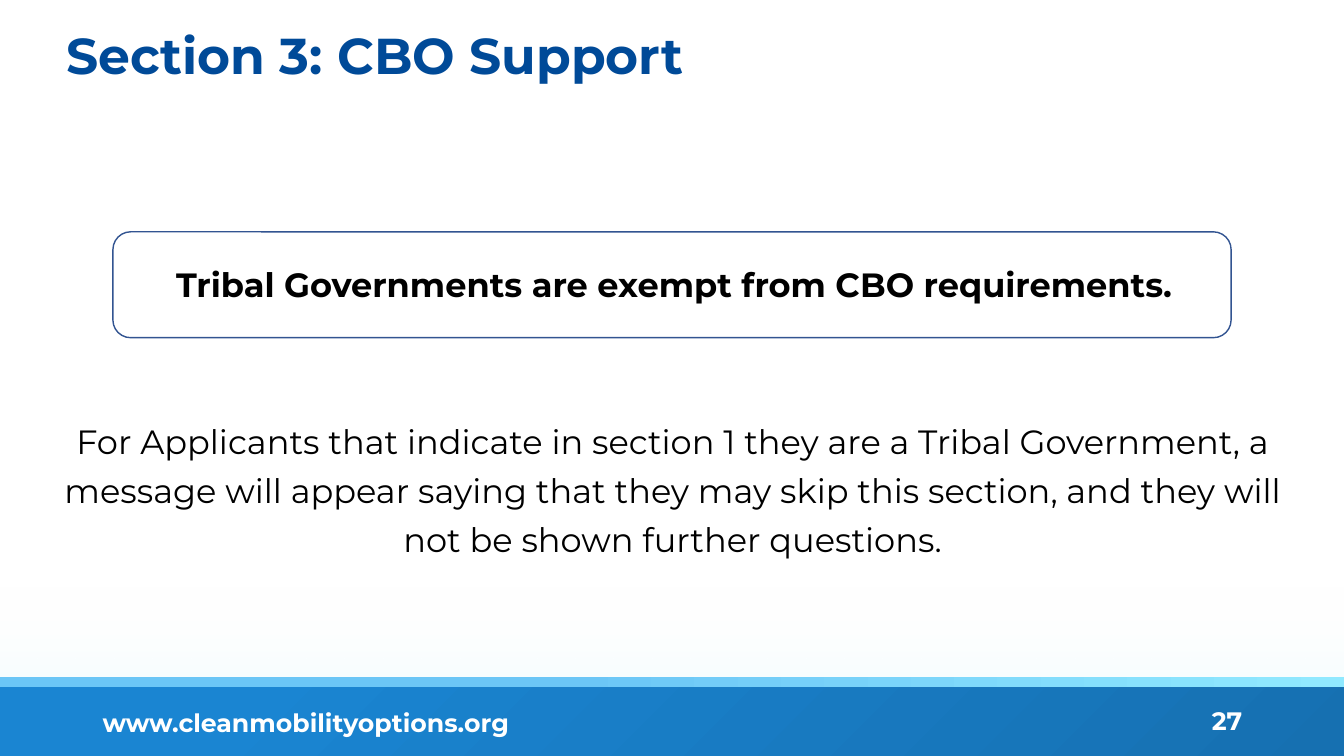
from dataclasses import dataclass
from typing import Optional

from lxml import etree
from pptx import Presentation
from pptx import util as u
from pptx.dml.color import RGBColor
from pptx.enum import shapes, text
from pptx.oxml import ns

FONT = "Montserrat"
COLORS = {
    "white": "FFFFFF",
    "black": "000000",
    "title": "004A98",
    "outline": "325491",
    "mist": "E5FBFE",
    "footer_dark": "1670B1",
    "footer_light": "1A85D2",
    "stripe_blue": "6BC6F6",
    "stripe_cyan": "90E9FF",
}


@dataclass(frozen=True)
class Area:
    left: float
    top: float
    width: float
    height: float

    def lengths(self) -> tuple:
        return tuple(u.Inches(n) for n in (self.left, self.top, self.width, self.height))


@dataclass(frozen=True)
class Band:
    area: Area
    stops: tuple
    angle: int
    fades: bool = False


@dataclass(frozen=True)
class Label:
    area: Area
    words: str
    size: int
    color: str
    bold: bool = True
    align: text.PP_ALIGN = text.PP_ALIGN.LEFT
    anchor: text.MSO_ANCHOR = text.MSO_ANCHOR.TOP
    inset: tuple = (0.1, 0.05)
    line_points: Optional[int] = None
    fill: Optional[str] = None


BANDS = [
    Band(Area(0, 5.82, 13.33, 1.68), ((0, "mist"), (1, "white")), 90, fades=True),
    Band(Area(0, 6.81, 13.33, 0.69), ((0, "footer_dark"), (0.83, "footer_light")), 135),
    Band(Area(0, 6.72, 13.33, 0.1), ((0.42, "stripe_blue"), (1, "stripe_cyan")), 0),
]
LABELS = [
    Label(Area(0.92, 6.97, 5.88, 0.4), "www.cleanmobilityoptions.org", 18, "white",
          anchor=text.MSO_ANCHOR.MIDDLE),
    Label(Area(0.53, 0.17, 9.94, 0.74), "Section 3: CBO Support", 36, "title",
          inset=(0.13, 0.07)),
    Label(Area(0.95, 2.57, 11.47, 0.5),
          "Tribal Governments are exempt from CBO requirements.", 24, "black",
          align=text.PP_ALIGN.CENTER, fill="white"),
    Label(Area(0.37, 4.04, 12.6, 1.53),
          "For Applicants that indicate in section 1 they are a Tribal Government, "
          "a message will appear saying that they may skip this section, and they "
          "will not be shown further questions.", 24, "black", bold=False,
          align=text.PP_ALIGN.CENTER, line_points=35),
    Label(Area(9.42, 6.95, 3, 0.4), "27", 18, "white",
          align=text.PP_ALIGN.RIGHT, anchor=text.MSO_ANCHOR.MIDDLE),
]
FRAME = Area(1.12, 2.3, 11.09, 1.05)


def rgb(name: str) -> RGBColor:
    return RGBColor.from_string(COLORS[name])


def draw_band(page, band: Band) -> None:
    box = page.shapes.add_shape(shapes.MSO_SHAPE.RECTANGLE, *band.area.lengths())
    box.shadow.inherit = False
    box.line.fill.background()
    box.fill.gradient()
    box.fill.gradient_angle = band.angle
    for stop, (position, color) in zip(box.fill.gradient_stops, band.stops):
        stop.position = position
        stop.color.rgb = rgb(color)
    if band.fades:
        last_color = box._element.findall(".//" + ns.qn("a:srgbClr"))[-1]
        etree.SubElement(last_color, ns.qn("a:alpha")).set("val", "0")


def draw_label(page, label: Label) -> None:
    box = page.shapes.add_textbox(*label.area.lengths())
    if label.fill:
        box.fill.solid()
        box.fill.fore_color.rgb = rgb(label.fill)
    frame = box.text_frame
    frame.word_wrap = True
    frame.vertical_anchor = label.anchor
    frame.margin_left = frame.margin_right = u.Inches(label.inset[0])
    frame.margin_top = frame.margin_bottom = u.Inches(label.inset[1])
    para = frame.paragraphs[0]
    para.text = label.words
    para.alignment = label.align
    if label.line_points:
        para.line_spacing = u.Pt(label.line_points)
    para.font.name = FONT
    para.font.size = u.Pt(label.size)
    para.font.bold = label.bold
    para.font.color.rgb = rgb(label.color)


def draw_frame(page, area: Area) -> None:
    box = page.shapes.add_shape(shapes.MSO_SHAPE.ROUNDED_RECTANGLE, *area.lengths())
    box.shadow.inherit = False
    box.fill.background()
    box.line.color.rgb = rgb("outline")
    box.line.width = u.Pt(1)


def main() -> None:
    deck = Presentation()
    deck.slide_width, deck.slide_height = u.Inches(13.33), u.Inches(7.5)
    page = deck.slides.add_slide(deck.slide_layouts[6])
    for band in BANDS:
        draw_band(page, band)
    for label in LABELS:
        draw_label(page, label)
    draw_frame(page, FRAME)
    deck.save("out.pptx")


if __name__ == "__main__":
    main()
